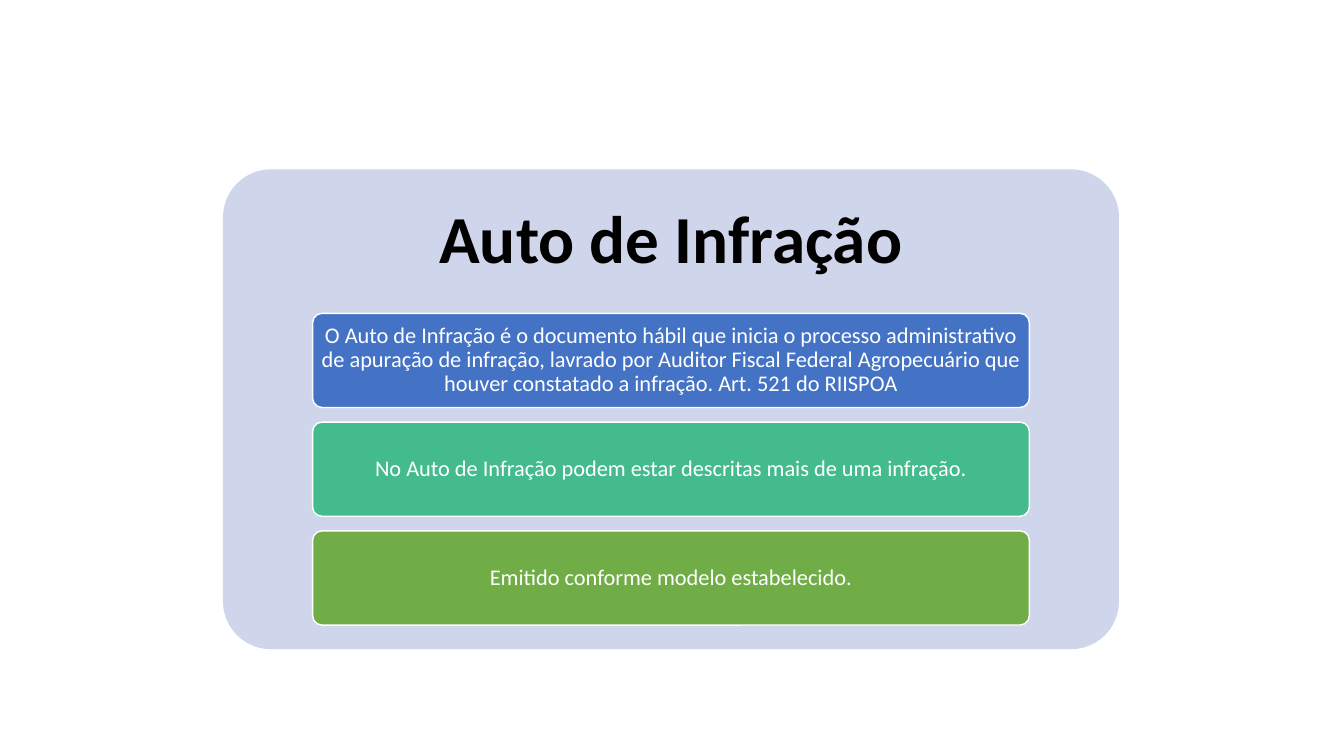
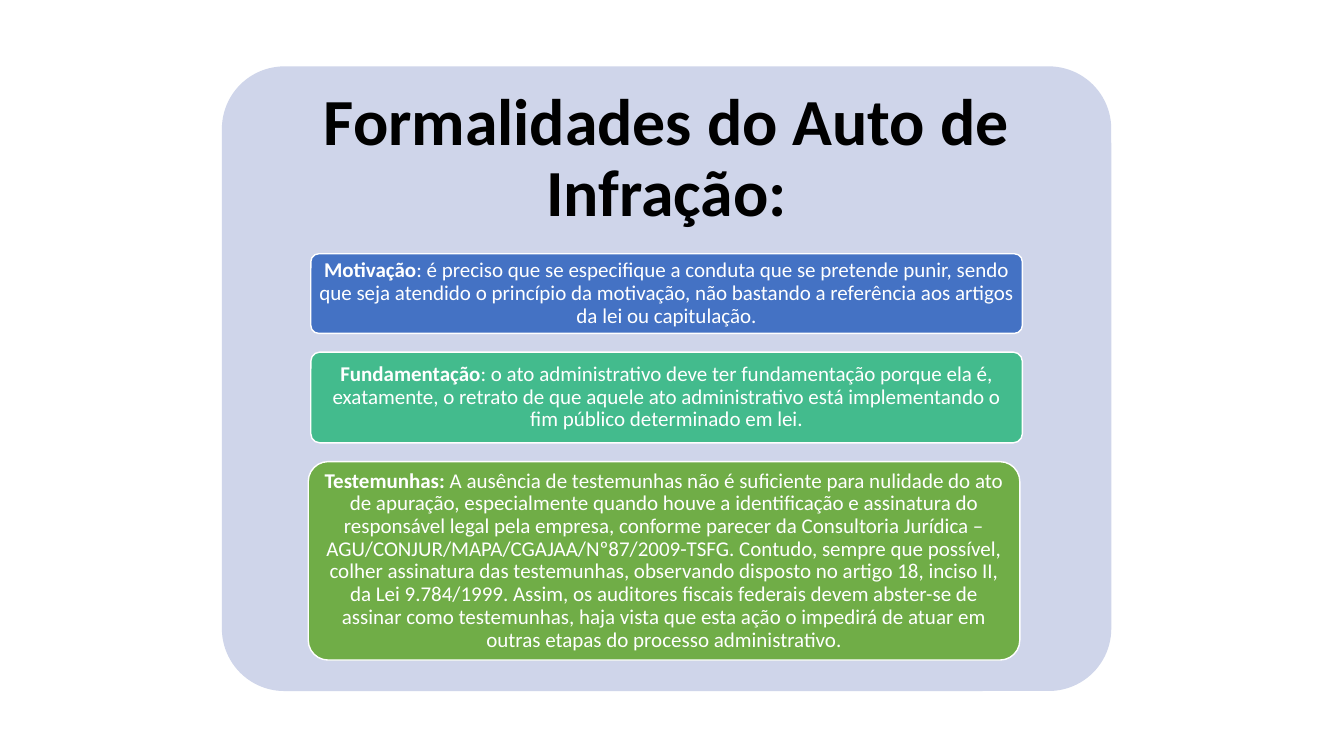
import pptx
import pptx.util
import pptx.dml.color
import pptx.enum.shapes
import pptx.enum.text

Pt = pptx.util.Pt


class Deck:
    font = "Calibri"
    colors = {
        "panel": "CFD5EA",
        "title": "000000",
        "light": "FFFFFF",
        "boxes": ["4472C4", "43BB8D", "70AD47"],
    }

    def __init__(self):
        self.prs = pptx.Presentation()
        self.prs.slide_width, self.prs.slide_height = Pt(960), Pt(540)
        self.s = None

    def rgb(self, value):
        return pptx.dml.color.RGBColor.from_string(value)

    def rounded(self, x, y, w, h, fill):
        sp = self.s.shapes.add_shape(
            pptx.enum.shapes.MSO_SHAPE.ROUNDED_RECTANGLE, Pt(x), Pt(y), Pt(w), Pt(h))
        sp.adjustments[0] = 0.1
        sp.shadow.inherit = False
        sp.fill.solid()
        sp.fill.fore_color.rgb = self.rgb(fill)
        sp.line.fill.background()
        return sp

    def set_text(self, sp, parts, size, color, inset_x, inset_y):
        tf = sp.text_frame
        tf.word_wrap = True
        tf.auto_size = pptx.enum.text.MSO_AUTO_SIZE.NONE
        tf.vertical_anchor = pptx.enum.text.MSO_ANCHOR.MIDDLE
        tf.margin_left = tf.margin_right = Pt(inset_x)
        tf.margin_top = tf.margin_bottom = Pt(inset_y)
        p = tf.paragraphs[0]
        p.alignment = pptx.enum.text.PP_ALIGN.CENTER
        p.line_spacing = 0.9
        for text, bold in parts:
            r = p.add_run()
            r.text = text
            r.font.name = self.font
            r.font.size = Pt(size)
            r.font.bold = bold
            r.font.color.rgb = self.rgb(color)

    def title(self, text, size, x, y, w, h):
        sp = self.s.shapes.title
        sp.left, sp.top, sp.width, sp.height = Pt(x), Pt(y), Pt(w), Pt(h)
        self.set_text(sp, [(text, True)], size, self.colors["title"], 14.4, 14.4)

    def box(self, parts, size, x, y, w, h, fill):
        sp = self.rounded(x, y, w, h, fill)
        sp.line.color.rgb = self.rgb(self.colors["light"])
        sp.line.width = Pt(1)
        self.set_text(sp, parts, size, self.colors["light"], 2.9, 2.2)

    def panel_slide(self, title, title_size, panel, boxes, size, gap):
        self.s = self.prs.slides.add_slide(self.prs.slide_layouts[5])
        x, y, w, h = panel
        back = self.rounded(x, y, w, h, self.colors["panel"])
        self.s.shapes.title.element.addprevious(back.element)
        self.title(title, title_size, x, y, w, 0.3 * h)
        top = y + 0.3 * h
        for (height, shift, parts), fill in zip(boxes, self.colors["boxes"]):
            self.box(parts, size, x + 0.1 * w + shift, top, 0.8 * w, height, fill)
            top += height + gap


def main():
    deck = Deck()
    deck.panel_slide("Auto de Infração", 48, (159.3, 121, 640, 342.7), [
        (67.3, 0, [("O Auto de Infração é o documento hábil que inicia o processo administrativo de apuração de infração, lavrado por Auditor Fiscal Federal Agropecuário que houver constatado a infração. Art. 521 do RIISPOA", False)]),
        (67.3, 0, [("No Auto de Infração podem estar descritas mais de uma infração.", False)]),
        (67.3, 0, [("Emitido conforme modelo estabelecido.", False)]),
    ], 16, 10.4)
    deck.panel_slide("Formalidades do Auto de Infração:", 47, (158.5, 47.4, 635.3, 446.2), [
        (56.9, 0, [
            ("Motivação", True),
            (": é preciso que se especifique a conduta que se pretende punir, sendo que seja atendido o princípio da motivação, não bastando a referência aos artigos da lei ou capitulação.", False)]),
        (64.8, 0, [
            ("Fundamentação", True),
            (": o ato administrativo deve ter fundamentação porque ela é, exatamente, o retrato de que aquele ato administrativo está implementando o fim público determinado em lei.", False)]),
        (141.7, -1.8, [
            ("Testemunhas: ", True),
            ("A ausência de testemunhas não é suficiente para nulidade do ato de apuração, especialmente quando houve a identificação e assinatura do responsável legal pela empresa, conforme parecer da Consultoria Jurídica – AGU/CONJUR/MAPA/CGAJAA/Nº87/2009-TSFG. Contudo, sempre que possível, colher assinatura das testemunhas, observando disposto no artigo 18, inciso II, da Lei 9.784/1999. Assim, os auditores fiscais federais devem abster-se de assinar como testemunhas, haja vista que esta ação o impedirá de atuar em outras etapas do processo administrativo.", False)]),
    ], 15, 13.4)
    deck.prs.save("out.pptx")


if __name__ == "__main__":
    main()
